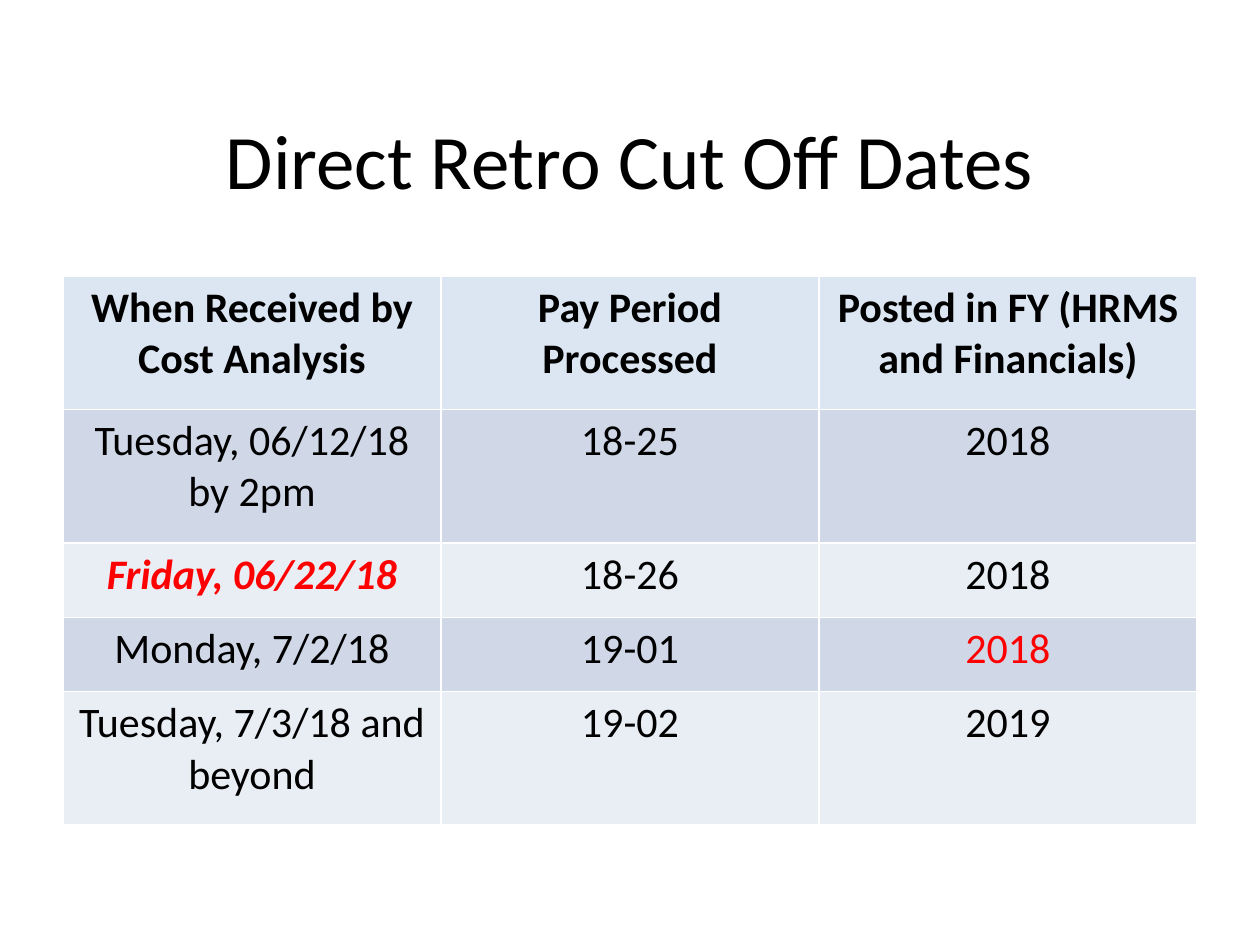
from pptx import Presentation
from pptx.dml.color import RGBColor
from pptx.enum.text import MSO_ANCHOR, PP_ALIGN
from pptx.util import Inches, Pt

CENTER = PP_ALIGN.CENTER
MIDDLE = MSO_ANCHOR.MIDDLE
FONT = "Calibri"
COLORS = {
    "text": "000000",
    "alert": "FF0000",
    "header": "DCE6F2",
    "odd": "D0D8E8",
    "even": "E9EDF4",
}
ROWS = [
    ("When Received by Cost Analysis", "Pay Period Processed", "Posted in FY (HRMS and Financials)"),
    ("Tuesday, 06/12/18 by 2pm", "18-25", "2018"),
    ("Friday, 06/22/18", "18-26", "2018"),
    ("Monday, 7/2/18", "19-01", "2018"),
    ("Tuesday, 7/3/18 and beyond", "19-02", "2019"),
]
TALL, SHORT = Inches(1.06), Inches(0.59)
ROW_HEIGHTS = [TALL, TALL, SHORT, SHORT, TALL]
DEADLINE_CELL = (2, 0)
ALERT_CELLS = {DEADLINE_CELL, (3, 2)}


def format_paragraph(paragraph, size, color="text", bold=False, italic=False):
    """Centre a paragraph and set its font."""
    paragraph.alignment = CENTER
    font = paragraph.font
    font.name, font.size = FONT, Pt(size)
    font.bold, font.italic = bold, italic
    font.color.rgb = RGBColor.from_string(COLORS[color])


def place_title(slide, left, top, width, height):
    """Fill the title placeholder and fit it to its box."""
    title = slide.shapes.title
    title.left, title.top, title.width, title.height = left, top, width, height
    title.text_frame.text = "Direct Retro Cut Off Dates"
    title.text_frame.vertical_anchor = MIDDLE
    format_paragraph(title.text_frame.paragraphs[0], 44)


def place_cutoff_table(slide, left, top, width):
    """Add the cut-off dates in equal columns below the title."""
    shape = slide.shapes.add_table(len(ROWS), len(ROWS[0]), left, top, width, sum(ROW_HEIGHTS))
    table = shape.table
    for row_index, (texts, height) in enumerate(zip(ROWS, ROW_HEIGHTS)):
        table.rows[row_index].height = height
        is_header = row_index == 0
        fill = "header" if is_header else ("even", "odd")[row_index % 2]
        for column_index, text in enumerate(texts):
            position = (row_index, column_index)
            is_deadline = position == DEADLINE_CELL
            cell = table.cell(*position)
            cell.text = text
            cell.fill.solid()
            cell.fill.fore_color.rgb = RGBColor.from_string(COLORS[fill])
            color = "alert" if position in ALERT_CELLS else "text"
            format_paragraph(cell.text_frame.paragraphs[0], 24, color, is_header or is_deadline, is_deadline)


def main():
    """Build and save the slide."""
    presentation = Presentation()
    presentation.slide_width, presentation.slide_height = Inches(10), Inches(7.5)
    slide = presentation.slides.add_slide(presentation.slide_layouts.get_by_name("Title Only"))
    margin = presentation.slide_width // 20
    content_width = presentation.slide_width - 2 * margin
    place_title(slide, margin, Inches(0.8), content_width, Inches(0.92))
    place_cutoff_table(slide, margin, Inches(2.19), content_width)
    presentation.save("out.pptx")


if __name__ == "__main__":
    main()
